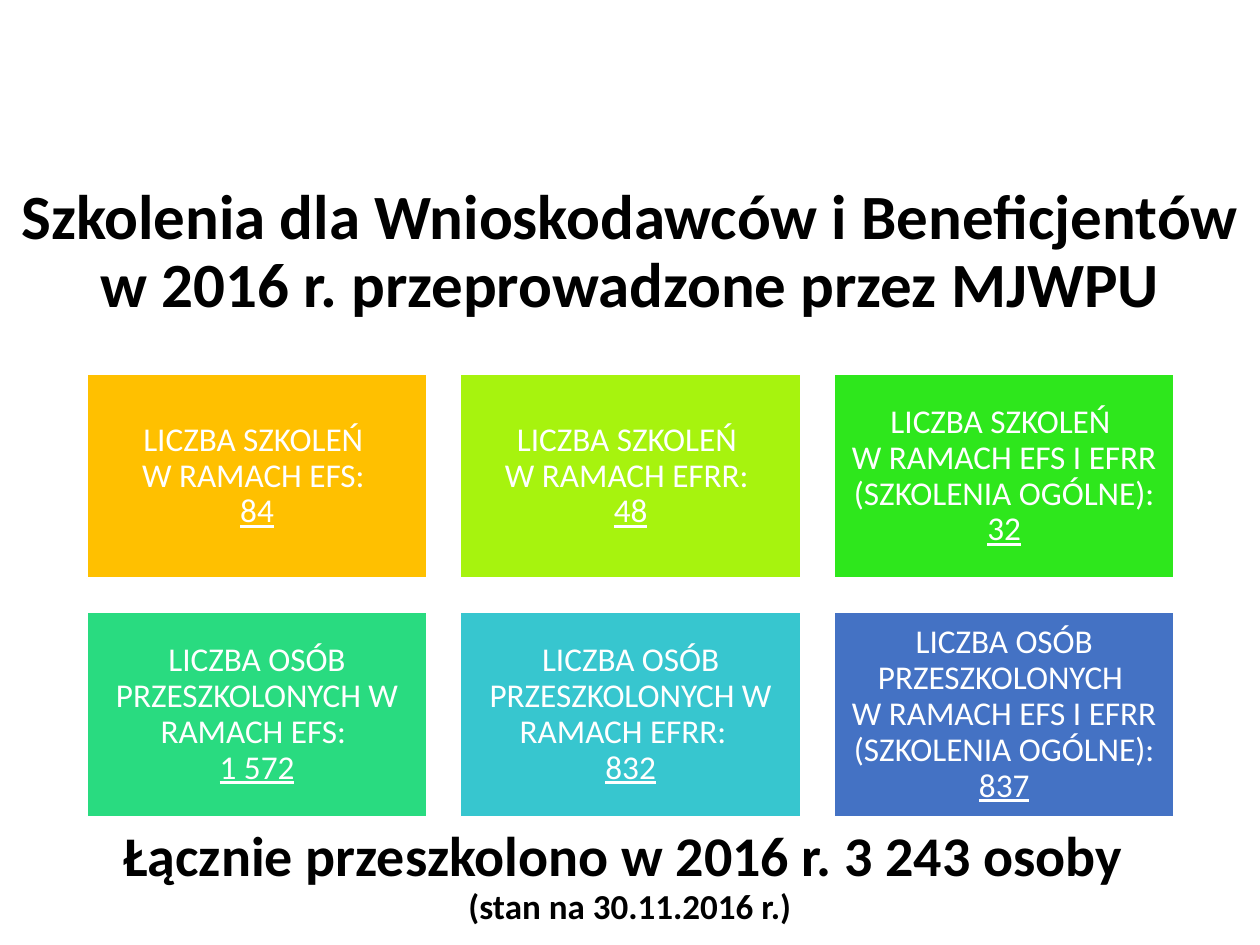
from pptx import Presentation
from pptx.dml.color import RGBColor
from pptx.enum.shapes import MSO_SHAPE as Shape
from pptx.enum.text import MSO_ANCHOR as Anchor, PP_ALIGN as Align
from pptx.util import Inches, Pt

BLACK = RGBColor(0x00, 0x00, 0x00)
WHITE = RGBColor(0xFF, 0xFF, 0xFF)
AMBER = RGBColor(0xFF, 0xC0, 0x00)
LIME = RGBColor(0xA7, 0xF3, 0x0E)
GREEN = RGBColor(0x2E, 0xE7, 0x1C)
MINT = RGBColor(0x29, 0xDB, 0x80)
TEAL = RGBColor(0x37, 0xC6, 0xCF)
BLUE = RGBColor(0x44, 0x72, 0xC4)

LEFT, TOP = 0.69, 2.97
CARD_W, CARD_H = 2.7, 1.62
STEP_X, STEP_Y = 2.965, 1.89
COLS = 3

HEAD = {"size": Pt(36), "bold": True}
TOTAL = {"size": Pt(32), "bold": True}
NOTE = {"size": Pt(20), "bold": True}
LABEL = {"size": Pt(19)}
COUNT = {"size": Pt(19), "underline": True}

CARDS = [
    (AMBER, "LICZBA SZKOLEŃ \nW RAMACH EFS: \n", "84"),
    (LIME, "LICZBA SZKOLEŃ \nW RAMACH EFRR: \n", "48"),
    (GREEN, "LICZBA SZKOLEŃ \nW RAMACH EFS I EFRR (SZKOLENIA OGÓLNE): ", "32"),
    (MINT, "LICZBA OSÓB PRZESZKOLONYCH W RAMACH EFS: \n", "1 572"),
    (TEAL, "LICZBA OSÓB PRZESZKOLONYCH W RAMACH EFRR:  \n", "832"),
    (BLUE, "LICZBA OSÓB PRZESZKOLONYCH \nW RAMACH EFS I EFRR (SZKOLENIA OGÓLNE): ",
     "837"),
]


def add_run(para, text, color, style):
    """Add styled text, turning each newline into a line break."""
    for i, line in enumerate(text.split("\n")):
        if i:
            para.add_line_break()
        if line:
            run = para.add_run()
            run.text = line
            run.font.name = "Calibri"
            run.font.color.rgb = color
            for key, value in style.items():
                setattr(run.font, key, value)


def fill_text(frame, parts, color):
    """Write (text, style) parts as one centred paragraph."""
    frame.word_wrap = True
    frame.vertical_anchor = Anchor.MIDDLE
    para = frame.paragraphs[0]
    para.alignment = Align.CENTER
    para.line_spacing = 0.9
    for text, style in parts:
        add_run(para, text, color, style)


def add_text(slide, top, parts):
    box = slide.shapes.add_textbox(0, Inches(top), Inches(10), Inches(1.81))
    fill_text(box.text_frame, parts, BLACK)


def add_card(slide, index, color, label, count):
    row, col = divmod(index, COLS)
    card = slide.shapes.add_shape(
        Shape.RECTANGLE, Inches(LEFT + col * STEP_X), Inches(TOP + row * STEP_Y),
        Inches(CARD_W), Inches(CARD_H))
    card.shadow.inherit = False
    card.fill.solid()
    card.fill.fore_color.rgb = color
    card.line.color.rgb = WHITE
    card.line.width = Pt(1)
    frame = card.text_frame
    for side in ("left", "top", "right", "bottom"):
        setattr(frame, f"margin_{side}", Inches(0.08))
    fill_text(frame, [(label, LABEL), (count, COUNT)], WHITE)


def main():
    deck = Presentation()
    deck.slide_width, deck.slide_height = Inches(10), Inches(7.5)
    slide = deck.slides.add_slide(deck.slide_layouts[6])
    add_text(slide, 1.1, [
        ("Szkolenia dla Wnioskodawców i Beneficjentów "
         "w 2016 r. przeprowadzone przez MJWPU", HEAD)])
    for index, card in enumerate(CARDS):
        add_card(slide, index, *card)
    add_text(slide, 6.06, [
        ("Łącznie przeszkolono w 2016 r. 3 243 osoby \n", TOTAL),
        ("(stan na 30.11.2016 r.)", NOTE)])
    deck.save("out.pptx")


if __name__ == "__main__":
    main()
